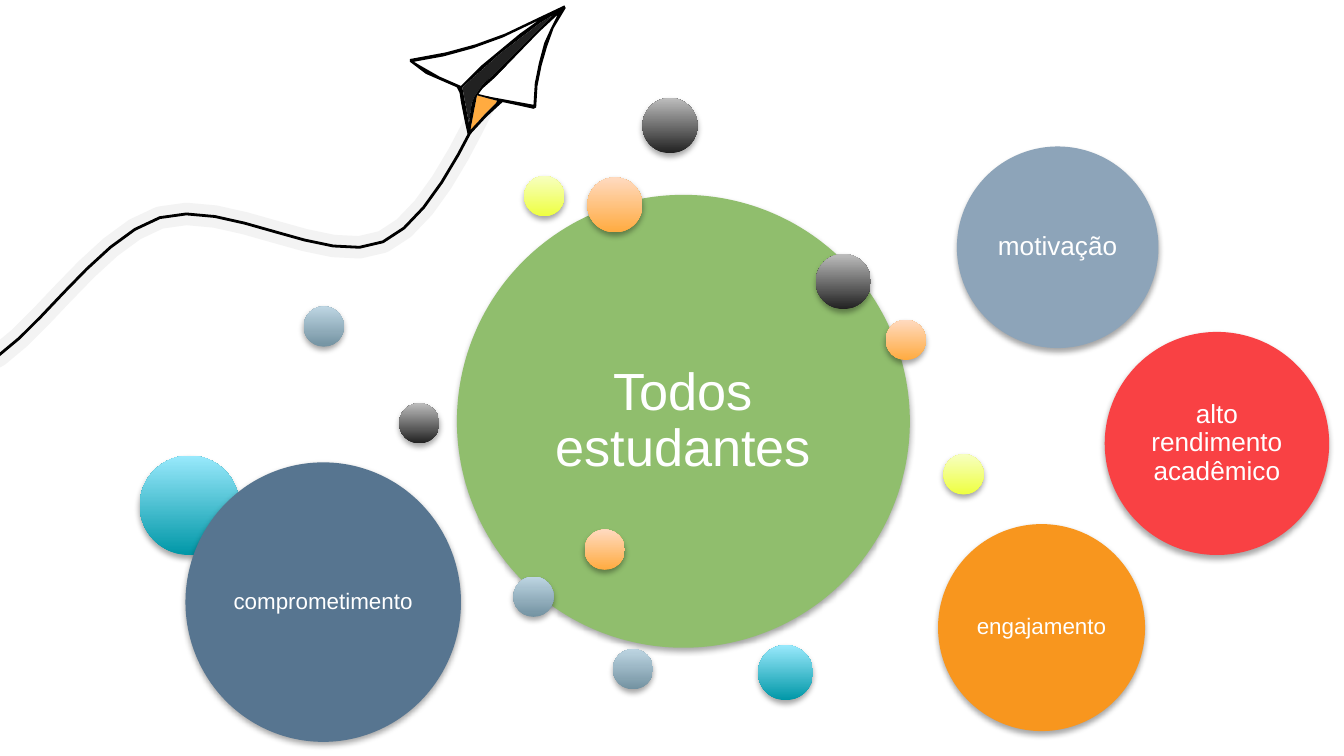
import pptx
import pptx.util
import pptx.dml.color
import pptx.enum.shapes
import pptx.enum.text
from lxml import etree

prs = pptx.Presentation()
prs.slide_width = pptx.util.Inches(10)
prs.slide_height = pptx.util.Inches(5.625)
s = prs.slides.add_slide(prs.slide_layouts[6])
U = prs.slide_width / 100  # grid step: 100 columns, 56.25 rows
SHAPE = pptx.enum.shapes.MSO_SHAPE
A = "http://schemas.openxmlformats.org/drawingml/2006/main"


def paint(fill, *hexes):
    """One colour gives a solid fill, two a gradient from bottom to top."""
    if len(hexes) == 1:
        fill.solid()
        fill.fore_color.rgb = pptx.dml.color.RGBColor.from_string(hexes[0])
        return
    fill.gradient()
    fill.gradient_angle = 90
    for stop, value in zip(fill.gradient_stops, hexes):
        stop.color.rgb = pptx.dml.color.RGBColor.from_string(value)


def add_outline(contours, close=True):
    """Draw one freeform from contours given in grid steps."""
    scaled = [[(x * U, y * U) for x, y in pts] for pts in contours]
    builder = s.shapes.build_freeform(*scaled[0][0])
    for i, pts in enumerate(scaled):
        if i:
            builder.move_to(*pts[0])
        builder.add_line_segments(pts[1:], close=close)
    sp = builder.convert_to_shape()
    sp.shadow.inherit = False
    return sp


# White ground
sp = s.shapes.add_shape(SHAPE.RECTANGLE, 0, 0, prs.slide_width, prs.slide_height)
sp.shadow.inherit = False
paint(sp.fill, "FFFFFF")
paint(sp.line.fill, "FFFFFF")
sp.line.width = pptx.util.Pt(2)

# Bubbles: column, row, width, height, colours, label, text size
BLACK = ("212121", "BDBDBD")
STEEL = ("7392A1", "BDD5E2")
ORANGE = ("FFAB40", "FFDAC0")
TEAL = ("0097A7", "99E9FC")
LIME = ("EEFF41", "F7FFC0")
dots = [
    (47.8, 7.3, 4.1, BLACK), (38.2, 42.9, 3, STEEL), (65.9, 23.8, 3, ORANGE),
    (56.4, 48, 4.1, TEAL), (39, 13.1, 3, LIME), (29.7, 30, 3, BLACK),
    (43.7, 13.2, 4.1, ORANGE), (10.4, 33.9, 7.4, TEAL), (60.7, 18.9, 4.1, BLACK),
    (22.6, 22.8, 3, STEEL), (43.5, 39.4, 3, ORANGE), (70.2, 33.8, 3, LIME),
    (45.6, 48.3, 3, STEEL),
]
bubbles = [
    (34, 14.5, 33.7, 33.7, ("90BE6D",), "Todos estudantes", 28),
    *((x, y, d, d, hexes, "", 0) for x, y, d, hexes in dots),
    (71.2, 10.9, 15, 15, ("8DA4B9",), "motivação", 14),
    (69.8, 39, 15.4, 15.4, ("F8961E",), "engajamento", 12),
    (82.2, 24.7, 16.7, 16.6, ("F94144",), "alto rendimento acadêmico", 14),
    (13.8, 34.4, 20.5, 20.8, ("577590",), "comprometimento", 12),
]
for x, y, w, h, hexes, label, size in bubbles:
    sp = s.shapes.add_shape(SHAPE.OVAL, *(round(v * U) for v in (x, y, w, h)))
    paint(sp.fill, *hexes)
    sp.line.fill.background()
    sp.shadow.inherit = False
    effects = sp._element.spPr.find(f"{{{A}}}effectLst")
    shadow = etree.SubElement(effects, f"{{{A}}}outerShdw", blurRad=str(pptx.util.Pt(3.1)),
                              dist=str(pptx.util.Pt(1.8)), dir="5400000", rotWithShape="0")
    black = etree.SubElement(shadow, f"{{{A}}}srgbClr", val="000000")
    etree.SubElement(black, f"{{{A}}}alpha", val="35000")
    if not label:
        continue
    tf = sp.text_frame
    tf.word_wrap = True
    tf.vertical_anchor = pptx.enum.text.MSO_ANCHOR.MIDDLE
    inset = pptx.util.Pt(size * 0.3)
    tf.margin_left = tf.margin_right = tf.margin_top = tf.margin_bottom = inset
    p = tf.paragraphs[0]
    p.alignment = pptx.enum.text.PP_ALIGN.CENTER
    p.line_spacing = 0.9
    r = p.add_run()
    r.text = label
    r.font.name = "Arial"
    r.font.size = pptx.util.Pt(size)
    paint(r.font.fill, "FFFFFF")

# Flight trail: Bezier curves sampled to points, drawn as a pale band under a thin line
STEPS = 8
bezier = [(-11.4, 25.7), (-9.8, 26), (-5.5, 28.9), (-1.6, 27.3), (2.3, 25.8), (6.9, 17.8),
          (11.9, 16.2), (16.9, 14.7), (24.2, 19.9), (28.5, 18), (32.8, 16.1), (36.1, 7),
          (37.6, 4.8)]
trail = [bezier[0]]
for i in range(0, len(bezier) - 1, 3):
    for k in range(1, STEPS + 1):
        t = k / STEPS
        weights = ((1 - t) ** 3, 3 * t * (1 - t) ** 2, 3 * t * t * (1 - t), t ** 3)
        trail.append([sum(w * c for w, c in zip(weights, axis))
                      for axis in zip(*bezier[i:i + 4])])
for colour, width in (("F3F3F3", 12), ("000000", 1.5)):
    sp = add_outline([trail], close=False)
    sp.fill.background()
    paint(sp.line.fill, colour)
    sp.line.width = pptx.util.Pt(width)

# Paper plane: four panels, then a black outline with the panels cut out
left_wing = [(40.1, 1.5), (39.5, 1.8), (37.4, 2.8), (35.2, 3.6), (33, 4.2), (30.8, 4.6),
             (31.3, 4.9), (32.7, 5.7), (34.3, 6.4), (35.8, 4.9), (38.7, 2.5)]
fold = [(41.2, 1.1), (40.2, 1.7), (37.2, 4), (34.4, 6.5), (34.9, 9.2), (35, 8.4),
        (35.1, 7.7), (35.3, 7.2), (35.9, 6.3), (36.8, 5.5), (38.5, 3.8)]
flap = [(35.5, 7.1), (35.3, 8.1), (35, 9.7), (36, 8.6), (36.9, 7.7), (37, 7.5)]
right_wing = [(41.5, 1.1), (40.1, 2.4), (36.8, 5.8), (35.9, 6.6), (35.6, 7), (36.4, 7.2),
              (39.7, 7.8), (39.8, 6.2), (40.1, 4.7), (40.5, 3.2), (41, 2.1)]
rim = [(42, 0.4), (41.6, 0.6), (39.7, 1.5), (37.6, 2.5), (35.4, 3.3), (33.2, 3.9),
       (30.5, 4.4), (30.5, 4.6), (31.7, 5.5), (33.3, 6.2), (34, 6.5), (34.2, 6.9),
       (34.3, 7.6), (34.6, 9.1), (34.8, 10), (35, 10), (36.2, 8.7), (37.4, 7.6),
       (38.8, 7.9), (39.7, 8.1), (39.9, 8), (40, 6.4), (40.3, 4.9), (40.7, 3.5),
       (41.2, 2.1), (42.1, 0.6)]
plane = [
    ([left_wing], "FFFFFF"), ([fold], "212121"), ([flap], "FFAB40"), ([right_wing], "FFFFFF"),
    ([rim, left_wing, fold, flap, right_wing], "000000"),
]
for contours, colour in plane:
    sp = add_outline(contours)
    paint(sp.fill, colour)
    sp.line.fill.background()

prs.save("out.pptx")
